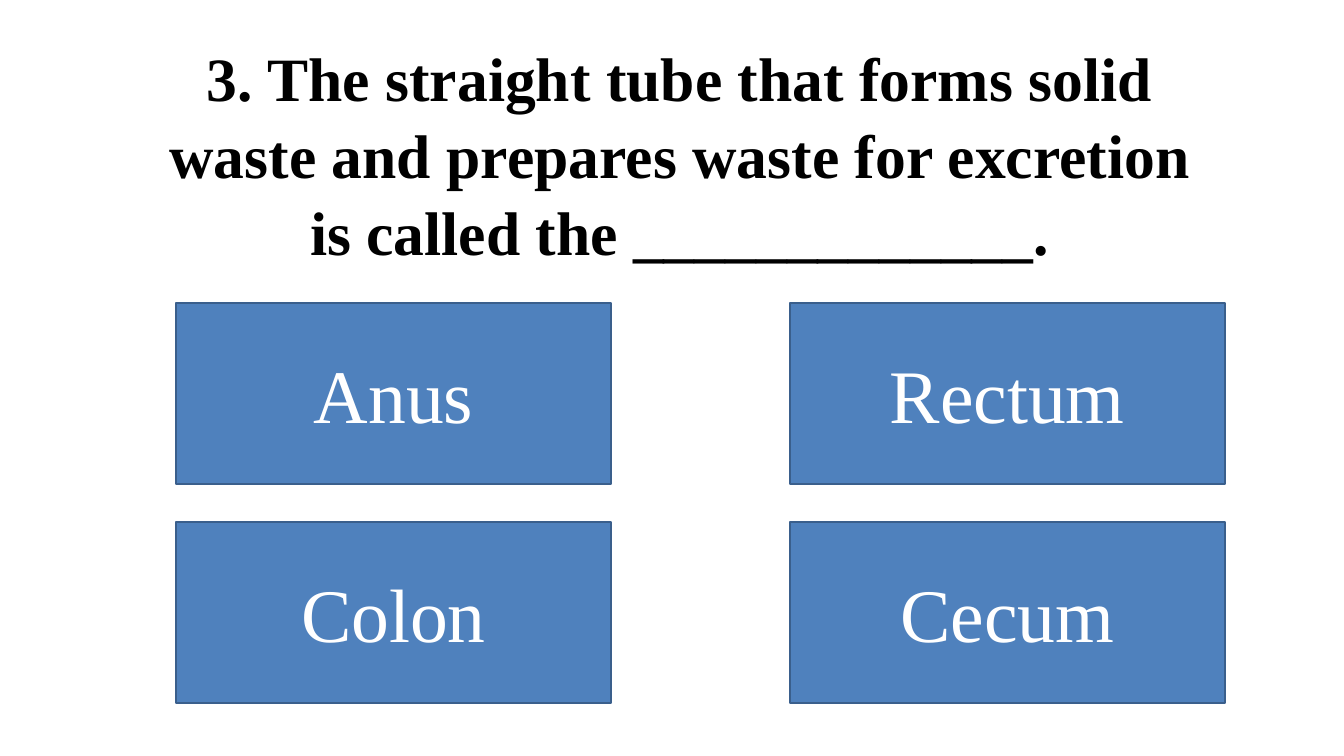
from dataclasses import dataclass

from pptx import Presentation
from pptx.dml.color import RGBColor
from pptx.enum.shapes import MSO_SHAPE
from pptx.enum.text import MSO_ANCHOR, MSO_AUTO_SIZE, PP_ALIGN
from pptx.util import Emu, Pt

PX_PER_INCH = 100.8
TITLE_ONLY = 5
QUESTION = (
    "3. The straight tube that forms solid waste and prepares waste "
    "for excretion is called the _____________."
)
ANSWERS = ["Anus", "Rectum", "Colon", "Cecum"]


@dataclass(frozen=True)
class Theme:
    """Colours, font and type sizes of the quiz slide."""

    font: str = "Times New Roman"
    ink: RGBColor = RGBColor(0, 0, 0)
    answer_ink: RGBColor = RGBColor(255, 255, 255)
    answer_fill: RGBColor = RGBColor(0x4F, 0x81, 0xBD)
    answer_line: RGBColor = RGBColor(0x3A, 0x5F, 0x8C)
    question_size: Pt = Pt(44)
    answer_size: Pt = Pt(54)
    line_width: Pt = Pt(2)


THEME = Theme()


def px(length):
    """Turn a length in px into EMU."""
    return Emu(round(length * 914400 / PX_PER_INCH))


def write_text(shape, text, size, color, bold=False):
    """Write one centred run in the middle of a shape."""
    frame = shape.text_frame
    frame.word_wrap = True
    frame.auto_size = MSO_AUTO_SIZE.NONE
    frame.vertical_anchor = MSO_ANCHOR.MIDDLE
    para = frame.paragraphs[0]
    para.alignment = PP_ALIGN.CENTER
    span = para.add_run()
    span.text = text
    span.font.name = THEME.font
    span.font.size = size
    span.font.bold = bold
    span.font.color.rgb = color
    return para


def add_question(page, text):
    """Place the question in the title placeholder."""
    title = page.shapes.title
    title.left, title.top = px(151), px(38)
    title.width, title.height = px(1058), px(229)
    para = write_text(title, text, THEME.question_size, THEME.ink, bold=True)
    para.line_spacing = 1.04


def add_answer(page, text, left, top):
    """Draw one answer box."""
    box = page.shapes.add_shape(
        MSO_SHAPE.RECTANGLE, px(left), px(top), px(435), px(181)
    )
    box.shadow.inherit = False
    box.fill.solid()
    box.fill.fore_color.rgb = THEME.answer_fill
    box.line.color.rgb = THEME.answer_line
    box.line.width = THEME.line_width
    write_text(box, text, THEME.answer_size, THEME.answer_ink)


def main():
    """Build the quiz slide and save it."""
    deck = Presentation()
    deck.slide_width, deck.slide_height = px(1344), px(756)
    page = deck.slides.add_slide(deck.slide_layouts[TITLE_ONLY])
    add_question(page, QUESTION)
    for index, answer in enumerate(ANSWERS):
        row, column = divmod(index, 2)
        add_answer(page, answer, 176 + column * 614, 303 + row * 219)
    deck.save("out.pptx")


if __name__ == "__main__":
    main()
